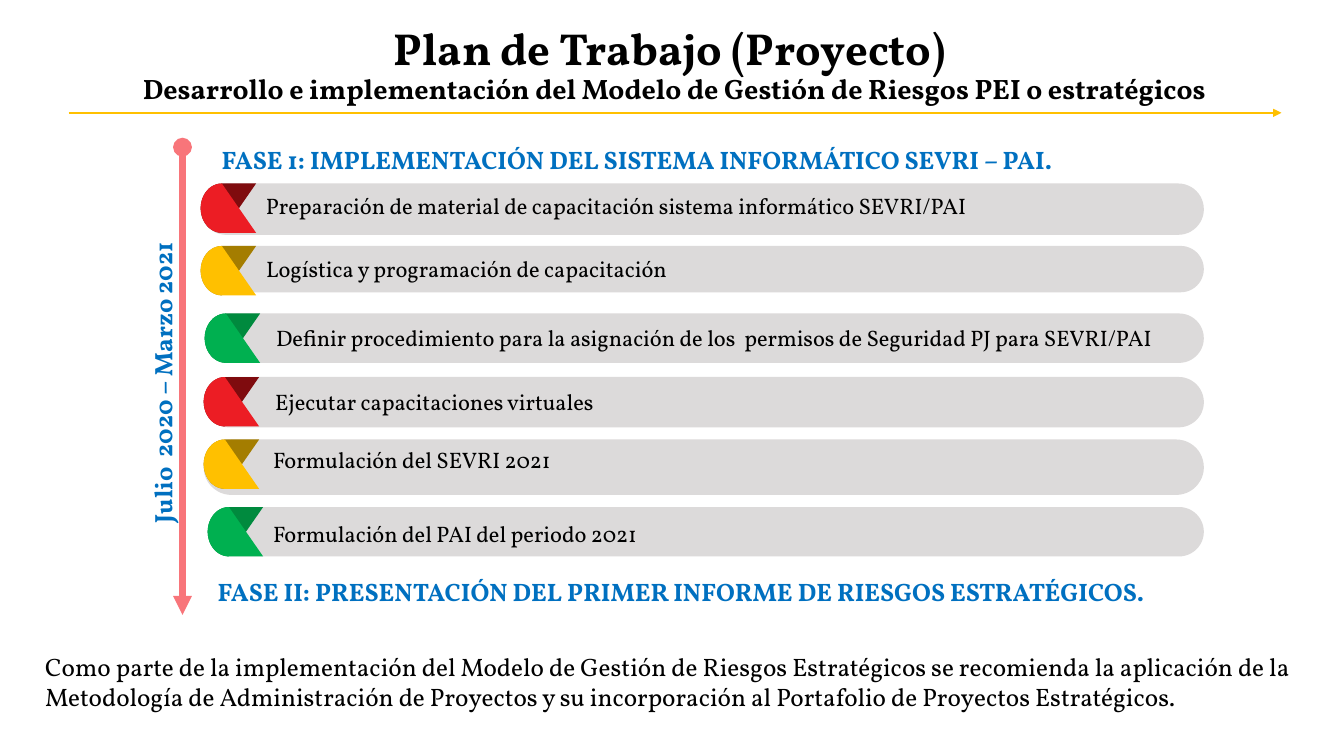
"""Builds the work plan slide with its phases, steps and timeline."""
from dataclasses import dataclass
from math import cos, pi, sin

from lxml import etree
from pptx import Presentation
from pptx.dml.color import RGBColor
from pptx.enum.shapes import MSO_CONNECTOR, MSO_SHAPE
from pptx.enum.text import MSO_ANCHOR, MSO_AUTO_SIZE, PP_ALIGN
from pptx.oxml.ns import qn
from pptx.util import Inches, Pt

STRAIGHT = MSO_CONNECTOR.STRAIGHT
ROUNDED = MSO_SHAPE.ROUNDED_RECTANGLE
MIDDLE = MSO_ANCHOR.MIDDLE
LEFT, CENTER = PP_ALIGN.LEFT, PP_ALIGN.CENTER
GROW, FIXED = MSO_AUTO_SIZE.SHAPE_TO_FIT_TEXT, MSO_AUTO_SIZE.NONE


@dataclass(frozen=True)
class Theme:
    font: str = "Vollkorn"
    ink: str = "000000"
    heading: str = "0070C0"
    bar: str = "DCDADA"
    rule: str = "FFC000"
    timeline: str = "F8757A"
    badges: tuple = (("EC1D24", "7F0B0E"), ("FFC000", "A47D00"), ("00B050", "008A3E"))
    title_size: int = 32
    subtitle_size: int = 20
    body_size: int = 18
    step_size: int = 16


@dataclass(frozen=True)
class Step:
    text: str
    badge_left: float
    bar_left: float
    top: float
    bar_height: float
    text_left: float
    text_top: float
    text_width: float


STEPS = (
    Step("Preparación de material de capacitación sistema informático SEVRI/PAI",
         1.99, 1.99, 1.82, 0.51, 2.54, 1.86, 8.04),
    Step("Logística y programación de capacitación",
         1.99, 2.06, 2.44, 0.46, 2.54, 2.48, 7.39),
    Step("Definir procedimiento para la asignación de los  permisos de Seguridad PJ para SEVRI/PAI",
         2.03, 2.03, 3.11, 0.49, 2.64, 3.17, 9.87),
    Step("Ejecutar capacitaciones virtuales",
         2.02, 2.02, 3.74, 0.5, 2.63, 3.8, 9.3),
    Step("Formulación del SEVRI 2021",
         2.02, 2.02, 4.36, 0.55, 2.61, 4.38, 9.91),
    Step("Formulación del PAI del periodo 2021",
         2.06, 2.06, 5.03, 0.49, 2.61, 5.11, 9.87),
)
BAR_RIGHT = 11.94
BADGE_WIDTH, BADGE_HEIGHT, BADGE_CURVE = 0.55, 0.49, 0.21
CURVE_STEPS = 24


def write_span(para, text, *, size, color, font, bold=False):
    span = para.add_run()
    span.text = text
    span.font.name = font
    span.font.size = Pt(size)
    span.font.bold = bold
    span.font.color.rgb = RGBColor.from_string(color)


class PlanPage:
    def __init__(self, page, theme):
        self.page = page
        self.theme = theme

    def title(self, heading, subtitle, left, top, width, height):
        box = self.page.shapes.title
        box.left, box.top = Inches(left), Inches(top)
        box.width, box.height = Inches(width), Inches(height)
        frame = box.text_frame
        frame.auto_size = FIXED
        frame.word_wrap = True
        frame.vertical_anchor = MIDDLE
        para = frame.paragraphs[0]
        para.alignment = CENTER
        para.line_spacing = 0.9
        style = {"color": self.theme.ink, "font": self.theme.font, "bold": True}
        write_span(para, heading, size=self.theme.title_size, **style)
        para.add_line_break()
        write_span(para, subtitle, size=self.theme.subtitle_size, **style)

    def label(self, text, left, top, width, height, *, size, color,
              bold=False, align=LEFT, rotation=0):
        box = self.page.shapes.add_textbox(
            Inches(left), Inches(top), Inches(width), Inches(height))
        box.rotation = rotation
        frame = box.text_frame
        frame.word_wrap = True
        frame.auto_size = GROW
        para = frame.paragraphs[0]
        para.alignment = align
        write_span(para, text, size=size, color=color, font=self.theme.font, bold=bold)

    def heading(self, text, left, top, width, **style):
        self.label(text, left, top, width, 0.4, size=self.theme.body_size,
                   color=self.theme.heading, bold=True, **style)

    def arrow(self, start, end, color, weight, head="none"):
        line = self.page.shapes.add_connector(
            STRAIGHT, *(Inches(value) for value in (*start, *end)))
        line.line.color.rgb = RGBColor.from_string(color)
        line.line.width = Pt(weight)
        outline = line.line._get_or_add_ln()
        etree.SubElement(outline, qn("a:headEnd"), type=head)
        etree.SubElement(outline, qn("a:tailEnd"), type="triangle")
        etree.SubElement(line._element.spPr, qn("a:effectLst"))

    def paint(self, shape, color):
        shape.shadow.inherit = False
        shape.fill.solid()
        shape.fill.fore_color.rgb = RGBColor.from_string(color)
        shape.line.fill.background()

    def bar(self, left, top, width, height):
        shape = self.page.shapes.add_shape(
            ROUNDED, Inches(left), Inches(top), Inches(width), Inches(height))
        shape.adjustments[0] = 0.5
        self.paint(shape, self.theme.bar)

    def fold(self, left, top, tip_height, color):
        radius = BADGE_HEIGHT / 2
        angles = [pi * index / CURVE_STEPS for index in range(CURVE_STEPS + 1)]
        curve = [(Inches(left + BADGE_CURVE * (1 - sin(angle))),
                  Inches(top + radius * (1 - cos(angle)))) for angle in angles]
        builder = self.page.shapes.build_freeform(
            Inches(left + BADGE_WIDTH), Inches(top + tip_height))
        builder.add_line_segments(curve, close=True)
        self.paint(builder.convert_to_shape(), color)

    def step(self, step, colors):
        front, back = colors
        self.bar(step.bar_left, step.top, BAR_RIGHT - step.bar_left, step.bar_height)
        self.fold(step.badge_left, step.top, 0, back)
        self.fold(step.badge_left, step.top, BADGE_HEIGHT, front)
        self.label(step.text, step.text_left, step.text_top, step.text_width, 0.37,
                   size=self.theme.step_size, color=self.theme.ink)


def main():
    theme = Theme()
    deck = Presentation()
    deck.slide_width, deck.slide_height = Inches(13.33), Inches(7.5)
    plan = PlanPage(deck.slides.add_slide(deck.slide_layouts[5]), theme)

    plan.title("Plan de Trabajo (Proyecto) ",
               "Desarrollo e implementación del Modelo de Gestión de Riesgos PEI o estratégicos",
               0.94, -0.07, 11.5, 1.45)
    plan.arrow((0.68, 1.12), (12.71, 1.12), theme.rule, 1)
    for index, step in enumerate(STEPS):
        plan.step(step, theme.badges[index % len(theme.badges)])
    plan.arrow((1.81, 1.46), (1.81, 6.1), theme.timeline, 4.5, head="oval")
    plan.heading("FASE 1: IMPLEMENTACIÓN DEL SISTEMA INFORMÁTICO SEVRI – PAI.", 2.1, 1.38, 10.16)
    plan.heading("FASE II: PRESENTACIÓN DEL PRIMER INFORME DE RIESGOS ESTRATÉGICOS.",
                 2.06, 5.67, 10.39)
    plan.heading("Julio  2020 – Marzo 2021", -0.71, 3.6, 4.64, align=CENTER, rotation=270)
    plan.label("Como parte de la implementación del Modelo de Gestión de Riesgos Estratégicos "
               "se recomienda la aplicación de la Metodología de Administración de Proyectos "
               "y su incorporación al Portafolio de Proyectos Estratégicos.",
               0.35, 6.41, 12.55, 0.71, size=theme.body_size, color=theme.ink)
    deck.save("out.pptx")


if __name__ == "__main__":
    main()
